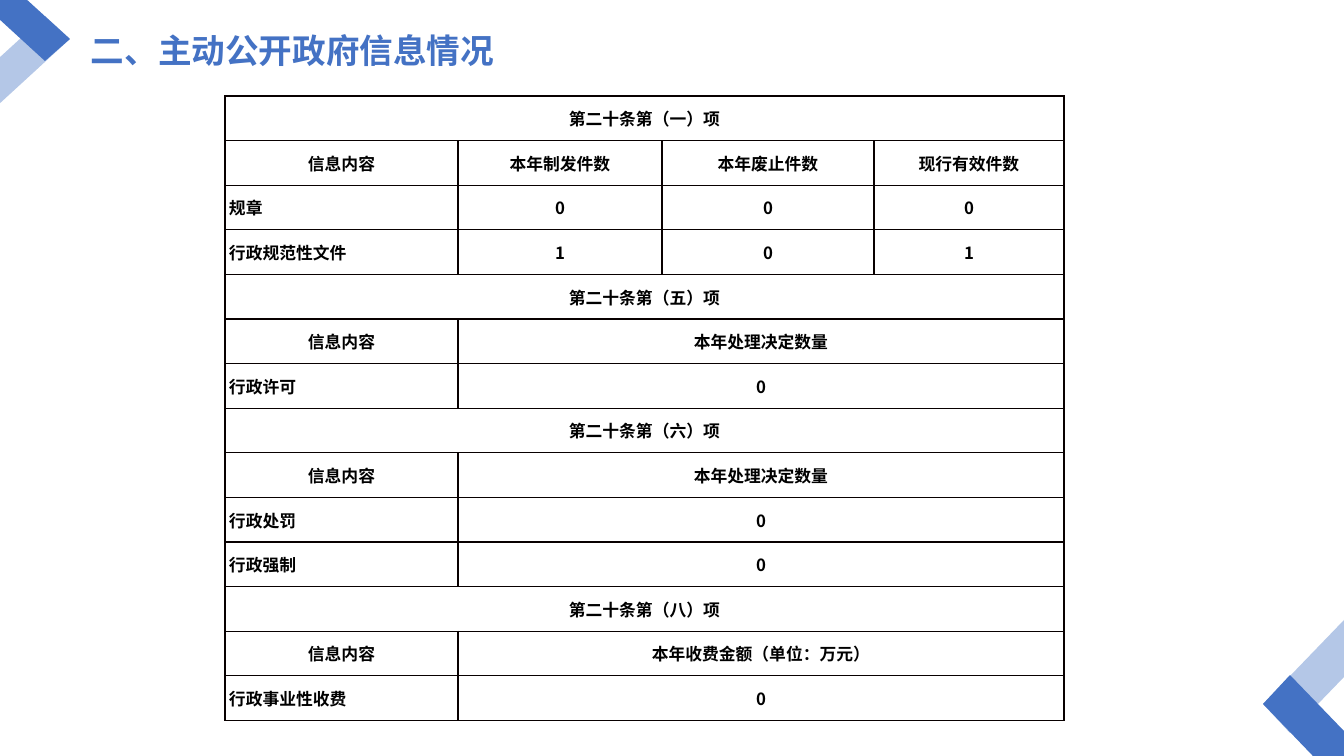
from lxml.etree import SubElement as Sub
from pptx import Presentation
from pptx.dml.color import RGBColor as RGB
from pptx.enum.text import MSO_ANCHOR as Anchor, PP_ALIGN as Align
from pptx.oxml.ns import qn
from pptx.util import Pt

FACE = "Noto Sans CJK SC"
HEX = {"pale": "B4C7E7", "blue": "4472C4", "ink": "000000",
       "rule": "080000", "white": "FFFFFF"}
TITLE = "二、主动公开政府信息情况"
HEAD = "信息内容"
ROWS = [
    ["第二十条第（一）项"],
    [HEAD, "本年制发件数", "本年废止件数", "现行有效件数"],
    ["规章", "0", "0", "0"],
    ["行政规范性文件", "1", "0", "1"],
    ["第二十条第（五）项"],
    [HEAD, "本年处理决定数量"],
    ["行政许可", "0"],
    ["第二十条第（六）项"],
    [HEAD, "本年处理决定数量"],
    ["行政处罚", "0"],
    ["行政强制", "0"],
    ["第二十条第（八）项"],
    [HEAD, "本年收费金额（单位：万元）"],
    ["行政事业性收费", "0"],
]
COLS = [233, 204, 212, 190]
BANDS = [
    ("pale", [(-2, 59), (45, 16), (70, 39), (-2, 105)]),
    ("blue", [(-2, -2), (25, -2), (70, 39), (45, 61), (-2, 18)]),
    ("pale", [(1344, 677), (1290, 733), (1263, 704), (1344, 620)]),
    ("blue", [(1344, 756), (1313, 756), (1263, 704), (1290, 675), (1344, 731)]),
]
PX = 914400 / 100.8


def emu(px):
    return round(px * PX)


def write(para, text, size, color):
    para.text = text
    font = para.font
    font.size, font.bold, font.name = Pt(size), True, FACE
    font.color.rgb = RGB.from_string(HEX[color])
    Sub(font._element, qn("a:ea"), typeface=FACE)


def frame(cell):
    props = cell._tc.get_or_add_tcPr()
    for at, side in enumerate(("lnL", "lnR", "lnT", "lnB")):
        line = props.makeelement(qn("a:" + side), {"w": str(Pt(1))})
        fill = Sub(line, qn("a:solidFill"))
        Sub(fill, qn("a:srgbClr"), val=HEX["rule"])
        props.insert(at, line)


deck = Presentation()
deck.slide_width, deck.slide_height = emu(1344), emu(756)
slide = deck.slides.add_slide(deck.slide_layouts[6])
shapes = slide.shapes

for color, points in BANDS:
    path = shapes.build_freeform(*points[0], scale=PX)
    path.add_line_segments(points[1:], close=True)
    band = path.convert_to_shape()
    band.shadow.inherit = False
    band.fill.solid()
    band.fill.fore_color.rgb = RGB.from_string(HEX[color])
    band.line.fill.background()

box = shapes.add_textbox(emu(91), emu(29), emu(409), emu(42)).text_frame
box.word_wrap = True
box.vertical_anchor = Anchor.MIDDLE
box.margin_left = box.margin_right = 0
write(box.paragraphs[0], TITLE, 24, "blue")

table = shapes.add_table(len(ROWS), len(COLS), emu(225), emu(96),
                         emu(sum(COLS)), emu(625)).table
table.first_row = table.horz_banding = False
for col, width in zip(table.columns, COLS):
    col.width = emu(width)

for r, texts in enumerate(ROWS):
    table.rows[r].height = emu(625 / len(ROWS))
    for c in range(len(COLS)):
        cell = table.cell(r, c)
        cell.fill.solid()
        cell.fill.fore_color.rgb = RGB.from_string(HEX["white"])
        frame(cell)
        cell.vertical_anchor = Anchor.MIDDLE
        cell.margin_left = cell.margin_right = emu(4)
        cell.margin_top = cell.margin_bottom = 0
        if c < len(texts):
            para = cell.text_frame.paragraphs[0]
            label = c == 0 and len(texts) > 1 and texts[0] != HEAD
            para.alignment = Align.LEFT if label else Align.CENTER
            write(para, texts[c], 12, "ink")
    if len(texts) < len(COLS):
        table.cell(r, len(texts) - 1).merge(table.cell(r, len(COLS) - 1))

deck.save("out.pptx")
